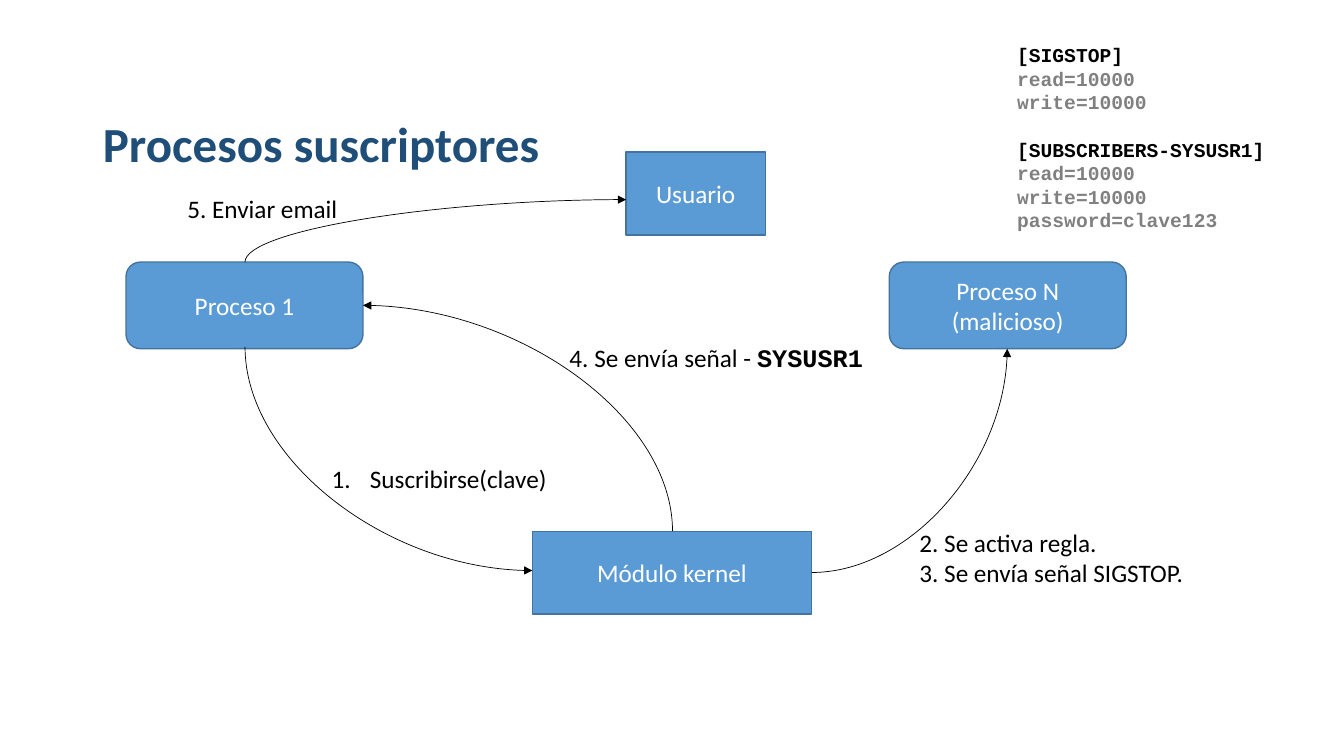
from lxml import etree
from pptx import Presentation
from pptx.dml.color import RGBColor
from pptx.enum.dml import MSO_LINE
from pptx.enum.shapes import MSO_CONNECTOR, MSO_SHAPE
from pptx.enum.text import MSO_ANCHOR, MSO_AUTO_SIZE, PP_ALIGN
from pptx.oxml.ns import qn
from pptx.util import Inches, Pt

CURVE = MSO_CONNECTOR.CURVE
RECT, ROUND = MSO_SHAPE.RECTANGLE, MSO_SHAPE.ROUNDED_RECTANGLE
MIDDLE = MSO_ANCHOR.MIDDLE
GROW = MSO_AUTO_SIZE.SHAPE_TO_FIT_TEXT
LEFT, CENTER = PP_ALIGN.LEFT, PP_ALIGN.CENTER
SOLID = MSO_LINE.SOLID

NAVY = RGBColor(0x1F, 0x4E, 0x79)
BLUE = RGBColor(0x5B, 0x9B, 0xD5)
EDGE = RGBColor(0x43, 0x73, 0x9E)
WHITE = RGBColor(255, 255, 255)
BLACK = RGBColor(0, 0, 0)
GRAY = RGBColor(0x80, 0x80, 0x80)
SANS, MONO = "Calibri", "Courier New"


def add_run(para, text, size=18, color=BLACK, face=SANS, bold=False):
    run = para.add_run()
    run.text = text
    run.font.size = Pt(size)
    run.font.name = face
    run.font.bold = bold
    run.font.color.rgb = color


def add_title(slide, box, text):
    title = slide.shapes.title
    title.left, title.top, title.width, title.height = map(Inches, box)
    title.text_frame.vertical_anchor = MIDDLE
    para = title.text_frame.paragraphs[0]
    para.alignment = LEFT
    para.line_spacing = 0.9
    add_run(para, text, 35, NAVY, bold=True)


def add_node(slide, kind, box, text):
    node = slide.shapes.add_shape(kind, *map(Inches, box))
    node.shadow.inherit = False
    node.fill.solid()
    node.fill.fore_color.rgb = BLUE
    node.line.color.rgb = EDGE
    node.line.width = Pt(1)
    frame = node.text_frame
    frame.word_wrap = True
    frame.vertical_anchor = MIDDLE
    para = frame.paragraphs[0]
    para.alignment = CENTER
    add_run(para, text, color=WHITE)


def add_label(slide, box):
    frame = slide.shapes.add_textbox(*map(Inches, box)).text_frame
    frame.word_wrap = False
    frame.auto_size = GROW
    return frame


def add_arc(slide, start, end, upright):
    (x1, y1), (x2, y2) = start, end
    wide, high = abs(x2 - x1), abs(y2 - y1)
    if upright:
        wide, high = high, wide
    left, top = (x1 + x2 - wide) / 2, (y1 + y2 - high) / 2
    arc = slide.shapes.add_connector(
        CURVE, *map(Inches, (left, top, left + wide, top + high)))
    props = arc._element.spPr
    props.find(qn("a:prstGeom")).set("prst", "curvedConnector2")
    frame = props.find(qn("a:xfrm"))
    if upright:
        frame.set("rot", str(270 * 60000))
        flips = {"flipH": y2 > y1, "flipV": x2 < x1}
    else:
        flips = {"flipH": x2 < x1, "flipV": y2 < y1}
    for name, flip in flips.items():
        frame.set(name, str(int(flip)))
    arc.line.color.rgb = BLACK
    arc.line.width = Pt(0.5)
    arc.line.dash_style = SOLID
    etree.SubElement(props.find(qn("a:ln")), qn("a:tailEnd"), type="triangle")
    etree.SubElement(props, qn("a:effectLst"))


def add_rules(slide, box, groups):
    frame = add_label(slide, box)
    para = frame.paragraphs[0]
    for index, (head, *items) in enumerate(groups):
        if index:
            para = frame.add_paragraph()
            para.space_before = Pt(17)
        add_run(para, head, 14, BLACK, MONO, True)
        for item in items:
            add_run(frame.add_paragraph(), item, 14, GRAY, MONO, True)


def add_step(slide, box, text):
    para = add_label(slide, box).paragraphs[0]
    props = para._p.get_or_add_pPr()
    props.set("marL", str(Inches(0.38)))
    props.set("indent", str(-Inches(0.38)))
    etree.SubElement(props, qn("a:buFont"), typeface="+mj-lt")
    etree.SubElement(props, qn("a:buAutoNum"), type="arabicPeriod")
    add_run(para, text)


def add_notes(slide):
    add_step(slide, (3.19, 4.55, 2.35, 0.4), "Suscribirse(clave)")
    para = add_label(slide, (9.02, 5.18, 2.85, 0.71)).paragraphs[0]
    add_run(para, "2. Se activa regla.")
    para.add_line_break()
    add_run(para, "3. Se envía señal SIGSTOP.")
    para = add_label(slide, (5.55, 3.35, 3.14, 0.4)).paragraphs[0]
    add_run(para, "4. Se envía señal - ")
    add_run(para, "SYSUSR1", face=MONO, bold=True)
    para = add_label(slide, (1.76, 1.87, 1.71, 0.4)).paragraphs[0]
    add_run(para, "5. Enviar email")


def add_flow(slide):
    for kind, box, text in (
        (RECT, (5.28, 5.27, 2.77, 0.82), "Módulo kernel"),
        (ROUND, (1.25, 2.6, 2.35, 0.86), "Proceso 1"),
        (ROUND, (8.82, 2.6, 2.35, 0.86), "Proceso N (malicioso)"),
        (RECT, (6.21, 1.51, 1.38, 0.82), "Usuario"),
    ):
        add_node(slide, kind, box, text)
    for start, end, upright in (
        ((2.43, 3.44), (5.28, 5.66), True),
        ((8.05, 5.68), (9.99, 3.46), False),
        ((6.67, 5.27), (3.6, 3.03), True),
        ((2.43, 2.6), (6.21, 1.98), True),
    ):
        add_arc(slide, start, end, upright)


def main():
    deck = Presentation()
    deck.slide_width, deck.slide_height = Inches(13.33), Inches(7.5)
    slide = deck.slides.add_slide(deck.slide_layouts[5])
    add_title(slide, (0.92, 0.86, 11.5, 1.19), "Procesos suscriptores")
    add_flow(slide)
    add_notes(slide)
    add_rules(slide, (9.99, 0.38, 2.67, 1.99), (
        ("[SIGSTOP]", "read=10000", "write=10000"),
        ("[SUBSCRIBERS-SYSUSR1]", "read=10000", "write=10000",
         "password=clave123"),
    ))
    deck.save("out.pptx")


if __name__ == "__main__":
    main()
